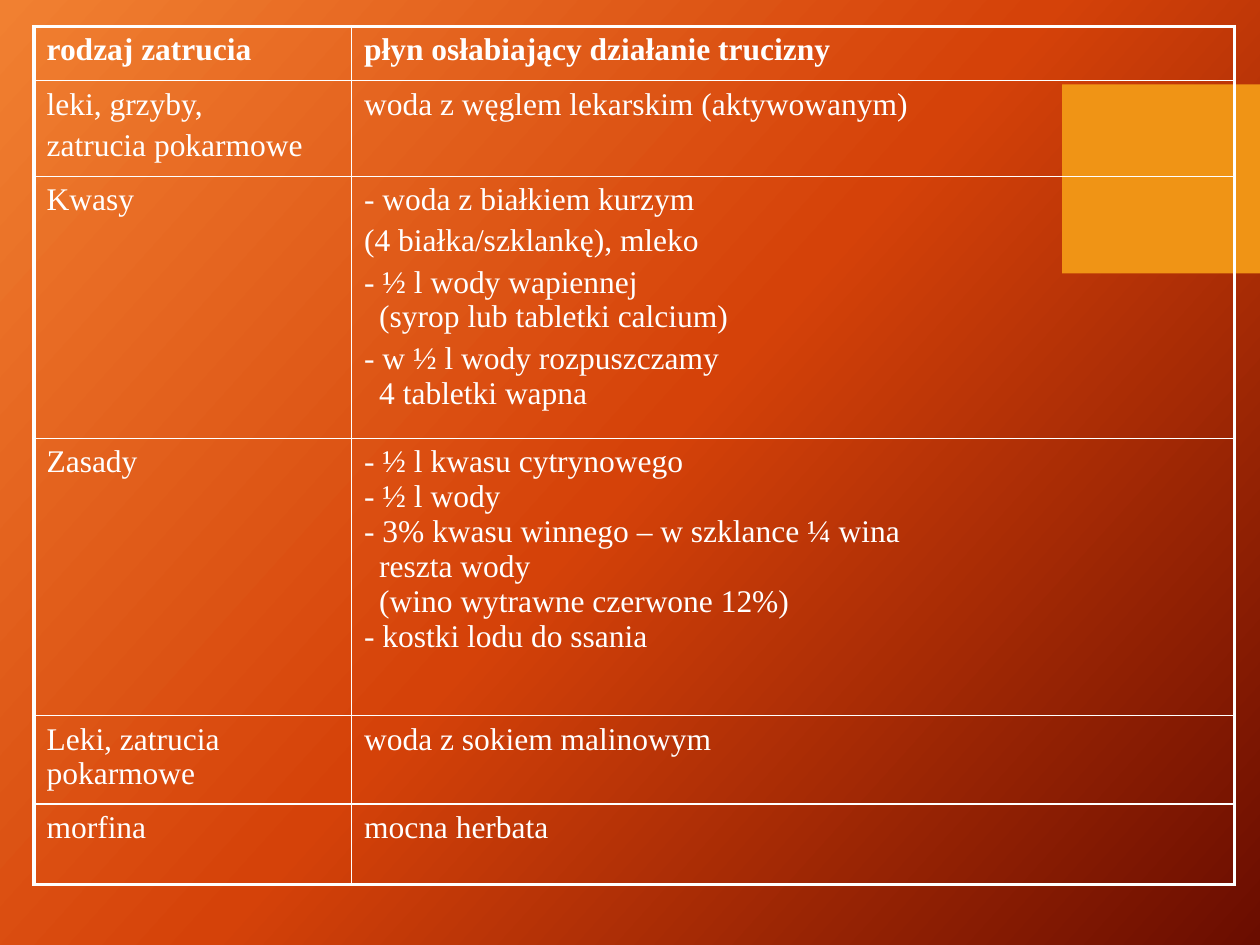
from copy import deepcopy
from dataclasses import dataclass

from lxml.etree import SubElement
from pptx import Presentation
from pptx.dml.color import RGBColor
from pptx.enum.shapes import MSO_SHAPE
from pptx.oxml.ns import qn
from pptx.util import Inches, Pt


@dataclass(frozen=True)
class Theme:
    gradient: tuple = ((0, "F18031"), (0.5, "D54209"), (1, "6A0D00"))
    angle: int = 318
    accent: str = "F09415"
    text: str = "FFFFFF"
    font: str = "Times New Roman"
    size: float = 18
    gap: float = 3.6
    outer: float = 2.25
    inner: float = 1


@dataclass(frozen=True)
class Para:
    text: str
    gap: bool = True
    left: float = 0
    indent: float = 0


class Builder:
    def __init__(self, prs, theme):
        self.theme = theme
        self.s = prs.slides.add_slide(prs.slide_layouts[6])

    def background(self):
        fill = self.s.background.fill
        fill.gradient()
        fill.gradient_angle = self.theme.angle
        stops = next(self.s.element.iter(qn("a:gsLst")))
        stops.append(deepcopy(stops[-1]))
        for stop, (position, color) in zip(fill.gradient_stops, self.theme.gradient):
            stop.position = position
            stop.color.rgb = RGBColor.from_string(color)

    def rectangle(self, x, y, w, h):
        sp = self.s.shapes.add_shape(
            MSO_SHAPE.RECTANGLE, Inches(x), Inches(y), Inches(w), Inches(h))
        sp.shadow.inherit = False
        sp.fill.solid()
        sp.fill.fore_color.rgb = RGBColor.from_string(self.theme.accent)
        sp.line.fill.background()

    def text(self, tf, paras, bold):
        for i, para in enumerate(paras):
            p = tf.paragraphs[0] if i == 0 else tf.add_paragraph()
            p.text = para.text
            p.space_before = Pt(self.theme.gap if i and para.gap else 0)
            if para.left:
                pPr = p._p.get_or_add_pPr()
                pPr.set("marL", str(Inches(para.left)))
                pPr.set("indent", str(Inches(para.indent)))
            p.font.name = self.theme.font
            p.font.size = Pt(self.theme.size)
            p.font.bold = bold
            p.font.color.rgb = RGBColor.from_string(self.theme.text)

    def borders(self, cell, outer):
        tcPr = cell._tc.get_or_add_tcPr()
        for i, side in enumerate("LRTB"):
            width = self.theme.outer if side in outer else self.theme.inner
            ln = SubElement(tcPr, qn(f"a:ln{side}"), w=str(Pt(width)))
            fill = SubElement(ln, qn("a:solidFill"))
            SubElement(fill, qn("a:srgbClr"), val=self.theme.text)
            tcPr.insert(i, ln)

    def table(self, x, y, widths, heights, rows):
        table = self.s.shapes.add_table(
            len(rows), len(widths), Inches(x), Inches(y),
            Inches(sum(widths)), Inches(sum(heights))).table
        table.first_row = table.horz_banding = False
        for column, width in zip(table.columns, widths):
            column.width = Inches(width)
        for r, (row, height) in enumerate(zip(rows, heights)):
            table.rows[r].height = Inches(height)
            for c, paras in enumerate(row):
                cell = table.cell(r, c)
                cell.fill.background()
                outer = "L" if c == 0 else "R"
                if r == 0:
                    outer += "T"
                if r == len(rows) - 1:
                    outer += "B"
                self.borders(cell, outer)
                self.text(cell.text_frame, paras, r == 0)


INDENT = 0.12


def plain(*lines):
    return [Para(line) for line in lines]


def hanging(text):
    return Para(text, left=INDENT, indent=-INDENT)


ROWS = [
    (plain("rodzaj zatrucia"), plain("płyn osłabiający działanie trucizny")),
    (plain("leki, grzyby,", "zatrucia pokarmowe"),
     plain("woda z węglem lekarskim (aktywowanym)")),
    (plain("Kwasy"),
     plain("- woda z białkiem kurzym", "(4 białka/szklankę), mleko")
     + [hanging("- ½ l wody wapiennej\v(syrop lub tabletki calcium)"),
        hanging("- w ½ l wody rozpuszczamy\v4 tabletki wapna")]),
    (plain("Zasady"),
     [Para("- ½ l kwasu cytrynowego\v- ½ l wody"),
      Para("- 3% kwasu winnego – w szklance ¼ wina\vreszta wody"
           "\v(wino wytrawne czerwone 12%)", False, INDENT, -INDENT),
      Para("- kostki lodu do ssania", False)]),
    (plain("Leki, zatrucia pokarmowe"), plain("woda z sokiem malinowym")),
    (plain("morfina"), plain("mocna herbata")),
]


def main():
    prs = Presentation()
    prs.slide_width, prs.slide_height = Inches(10), Inches(7.5)
    slide = Builder(prs, Theme())
    slide.background()
    slide.rectangle(8.43, 0.67, 1.57, 1.5)
    slide.table(0.27, 0.21, (2.52, 7.01), (0.43, 0.76, 2.08, 2.2, 0.7, 0.64), ROWS)
    prs.save("out.pptx")


if __name__ == "__main__":
    main()
